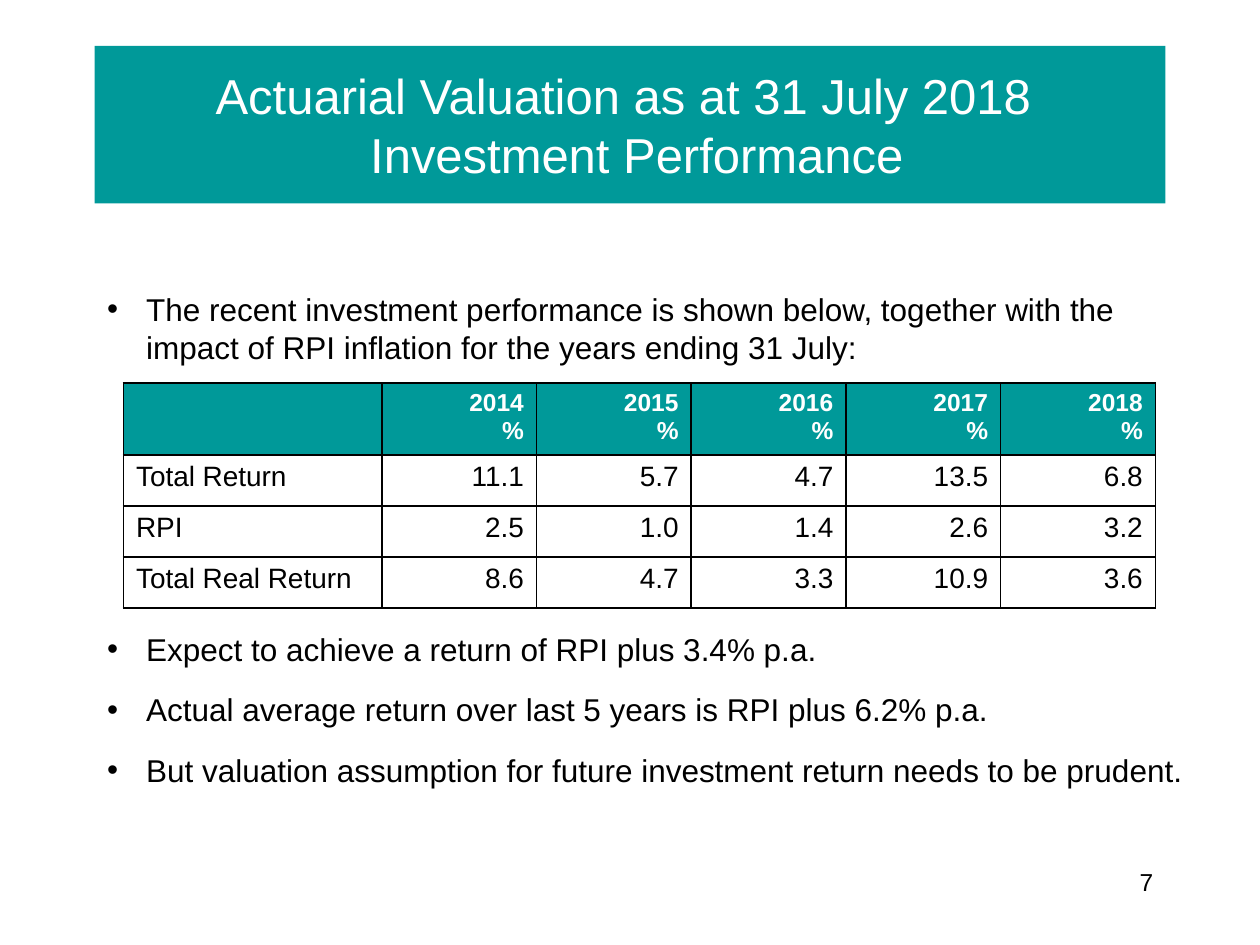
"""Build the investment performance slide of an actuarial valuation."""
import lxml.etree
import pptx
import pptx.dml.color
import pptx.enum.text
import pptx.oxml.ns
import pptx.util

TEAL = pptx.dml.color.RGBColor(0x00, 0x99, 0x99)
WHITE = pptx.dml.color.RGBColor(0xFF, 0xFF, 0xFF)
BLACK = pptx.dml.color.RGBColor(0x00, 0x00, 0x00)

FONT = "Arial"
WIDTH = pptx.util.Inches(10)
HEIGHT = pptx.util.Inches(7.5)
INDENT = pptx.util.Inches(0.31)
LEFT, CENTER, RIGHT = (
    pptx.enum.text.PP_ALIGN.LEFT,
    pptx.enum.text.PP_ALIGN.CENTER,
    pptx.enum.text.PP_ALIGN.RIGHT,
)

TITLE = "Actuarial Valuation as at 31 July 2018 \n Investment Performance"
BULLETS = [
    ("The recent investment performance is shown below, together with the "
     "impact of RPI inflation for the years ending 31 July:", 0),
    ("Expect to achieve a return of RPI plus 3.4% p.a.", 151),
    ("Actual average return over last 5 years is RPI plus 6.2% p.a.", 13),
    ("But valuation assumption for future investment return needs to be prudent.", 13),
]
YEARS = range(2014, 2019)
RETURNS = [
    ("Total Return", "11.1", "5.7", "4.7", "13.5", "6.8"),
    ("RPI", "2.5", "1.0", "1.4", "2.6", "3.2"),
    ("Total Real Return", "8.6", "4.7", "3.3", "10.9", "3.6"),
]


def across(percent):
    """Return a percentage of the slide's width."""
    return round(WIDTH * percent / 100)


def down(percent):
    """Return a percentage of the slide's height."""
    return round(HEIGHT * percent / 100)


def area(left, top, width, height):
    """Return a box given in percentages of the slide."""
    return across(left), down(top), across(width), down(height)


def move(placeholder, box):
    """Place a placeholder on a box."""
    placeholder.left, placeholder.top, placeholder.width, placeholder.height = box


def write(paragraph, text, size=18, color=BLACK, bold=False, align=LEFT,
          pitch=None, before=0):
    """Fill a paragraph with formatted text."""
    paragraph.alignment = align
    paragraph.space_before = pptx.util.Pt(before)
    if pitch:
        paragraph.line_spacing = pptx.util.Pt(pitch)
    run = paragraph.add_run()
    run.text = text
    run.font.name = FONT
    run.font.size = pptx.util.Pt(size)
    run.font.bold = bold
    run.font.color.rgb = color


def write_lines(frame, text, **style):
    """Write each line of the text as a paragraph of the frame."""
    for number, line in enumerate(text.split("\n")):
        paragraph = frame.add_paragraph() if number else frame.paragraphs[0]
        write(paragraph, line, **style)


def add_title(slide):
    """Set the title on its teal banner."""
    banner = slide.shapes.title
    move(banner, area(7.5, 4.85, 85, 16.67))
    banner.fill.solid()
    banner.fill.fore_color.rgb = TEAL
    frame = banner.text_frame
    frame.auto_size = pptx.enum.text.MSO_AUTO_SIZE.NONE
    frame.vertical_anchor = pptx.enum.text.MSO_ANCHOR.MIDDLE
    write_lines(frame, TITLE, size=28, color=WHITE, align=CENTER, pitch=33.6)


def add_bullets(slide):
    """Write the bullets, leaving room for the table after the first."""
    body = slide.placeholders[1]
    move(body, area(7.5, 30, 88.2, 54.67))
    frame = body.text_frame
    frame.auto_size = pptx.enum.text.MSO_AUTO_SIZE.NONE
    for number, (text, before) in enumerate(BULLETS):
        paragraph = frame.add_paragraph() if number else frame.paragraphs[0]
        write(paragraph, text, pitch=21.6, before=before)
        properties = paragraph._p.get_or_add_pPr()
        properties.set("marL", str(INDENT))
        properties.set("indent", str(-INDENT))


def add_borders(cell):
    """Draw a thin black line on each side of a cell."""
    qn = pptx.oxml.ns.qn
    properties = cell._tc.get_or_add_tcPr()
    for side in ("a:lnL", "a:lnR", "a:lnT", "a:lnB"):
        border = lxml.etree.SubElement(properties, qn(side), w=str(pptx.util.Pt(1)))
        fill = lxml.etree.SubElement(border, qn("a:solidFill"))
        lxml.etree.SubElement(fill, qn("a:srgbClr"), val=str(BLACK))


def add_returns_table(slide):
    """Add the table of yearly returns under a teal header."""
    header = ("", *(f"{year}\n%" for year in YEARS))
    rows = [header, *RETURNS]
    returns = slide.shapes.add_table(
        len(rows), len(header), *area(9.8, 40.53, 82, 24)).table
    returns.horz_banding = False
    for number, column in enumerate(returns.columns):
        column.width = across(12.28 if number else 20.5)
    for number, row in enumerate(returns.rows):
        row.height = down(5.4 if number else 7.6)
    for r, values in enumerate(rows):
        for c, value in enumerate(values):
            cell = returns.cell(r, c)
            add_borders(cell)
            align = RIGHT if c else LEFT
            if r:
                cell.fill.background()
                write_lines(cell.text_frame, value, size=16, align=align)
            else:
                cell.fill.solid()
                cell.fill.fore_color.rgb = TEAL
                if value:
                    write_lines(cell.text_frame, value, size=14, color=WHITE,
                                bold=True, align=align)


def add_page_number(slide):
    """Write the page number at the lower right."""
    frame = slide.shapes.add_textbox(*area(71.7, 91.07, 20.8, 6.67)).text_frame
    frame.word_wrap = True
    write_lines(frame, "7", size=14, align=RIGHT)


def main():
    """Build and save the presentation."""
    presentation = pptx.Presentation()
    presentation.slide_width = WIDTH
    presentation.slide_height = HEIGHT
    slide = presentation.slides.add_slide(presentation.slide_layouts[1])
    add_title(slide)
    add_bullets(slide)
    add_returns_table(slide)
    add_page_number(slide)
    presentation.save("out.pptx")


if __name__ == "__main__":
    main()
